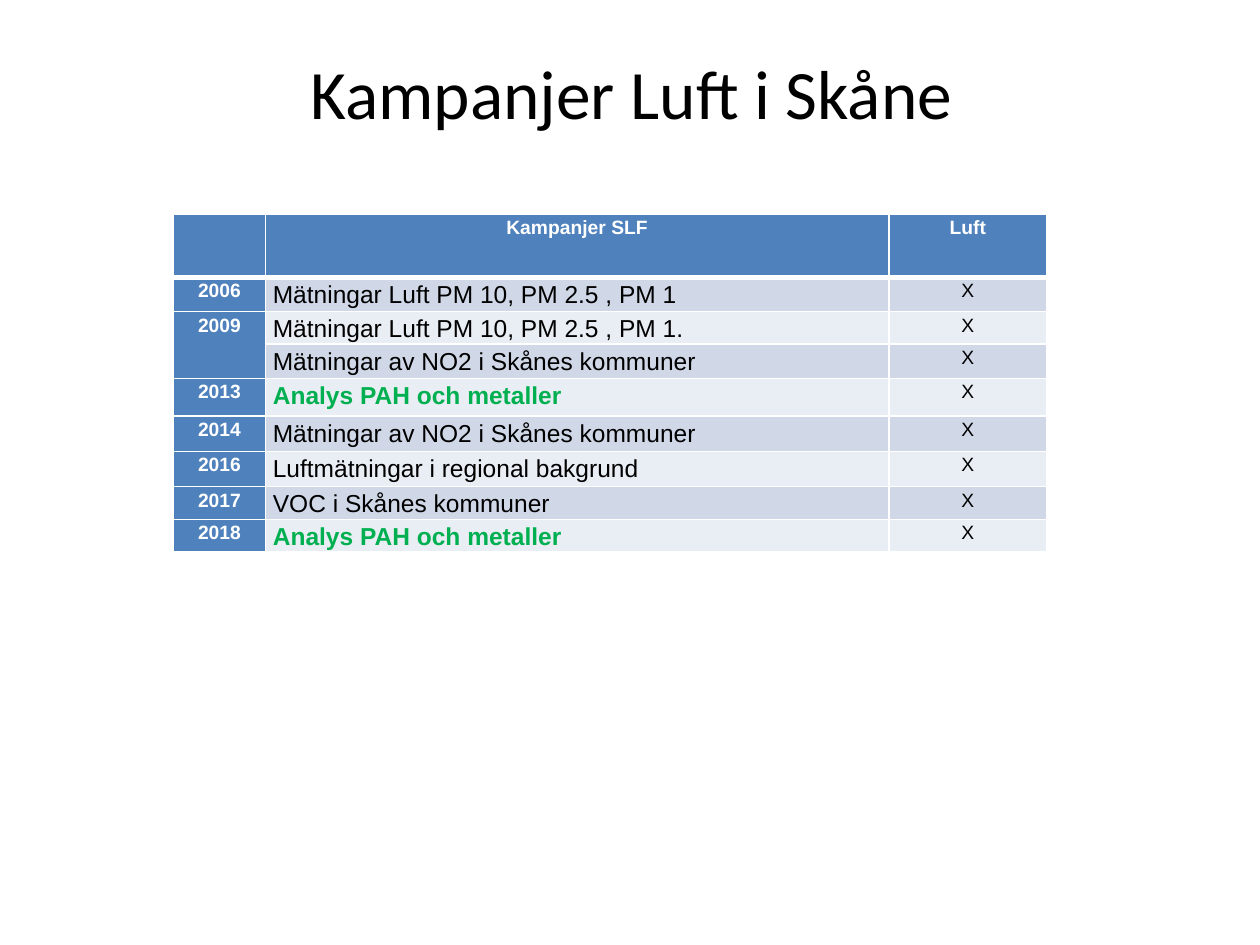
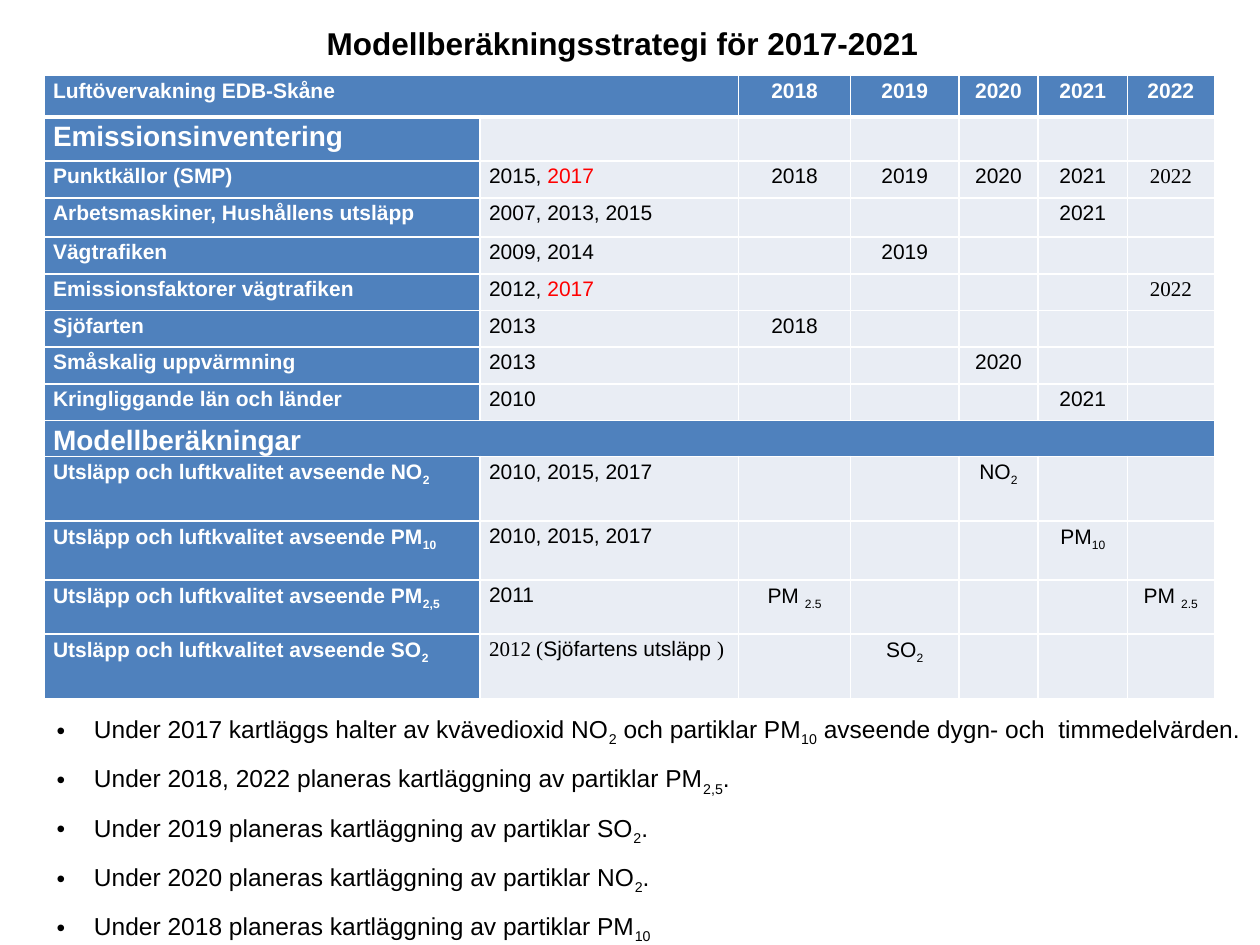
"""Build two slides on the air quality campaigns and model strategy in Skåne."""
from lxml.etree import SubElement
from pptx import Presentation
from pptx.dml.color import RGBColor
from pptx.enum.text import MSO_ANCHOR as Anchor, MSO_AUTO_SIZE as AutoSize, PP_ALIGN as Align
from pptx.oxml import parse_xml
from pptx.oxml.ns import nsdecls, qn
from pptx.util import Cm, Pt

BLUE, BAND, PALE = "4F81BD", "D0D8E8", "E9EDF4"
WHITE, BLACK, GREEN, RED = "FFFFFF", "000000", "00B050", "FF0000"
SANS, SERIF = "Arial", "Times New Roman"

CAMPAIGNS = [
    ("2006", "Mätningar Luft PM 10, PM 2.5 , PM 1"),
    ("2009", "Mätningar Luft PM 10, PM 2.5 , PM 1."),
    (None, "Mätningar av NO2 i Skånes kommuner"),
    ("2013", "Analys PAH och metaller"),
    ("2014", "Mätningar av NO2 i Skånes kommuner"),
    ("2016", "Luftmätningar i regional bakgrund"),
    ("2017", "VOC i Skånes kommuner"),
    ("2018", "Analys PAH och metaller"),
]


def rgb(value):
    """Turn a hex string into a colour."""
    return RGBColor.from_string(value)


def sub(text, low, tail=""):
    """Return runs with a subscript after the text."""
    runs = [(text, {}), (low, {"low": True})]
    return runs + [(tail, {})] if tail else runs


def add_runs(p, content, size, color=BLACK, bold=False, font=SANS):
    """Add a string, or a list of (text, overrides) runs, to a paragraph."""
    runs = [(content, {})] if isinstance(content, str) else content
    for text, own in runs:
        r = p.add_run()
        r.text = text
        r.font.size = Pt(size)
        r.font.name = own.get("font", font)
        r.font.bold = bold
        r.font.color.rgb = rgb(own.get("color", color))
        if own.get("low"):
            r.font._element.set("baseline", "-25000")


def place(shape, left, top, width, height):
    """Move and size a shape in centimetres."""
    shape.left, shape.top = Cm(left), Cm(top)
    shape.width, shape.height = Cm(width), Cm(height)


def set_title(s, text, box, **style):
    """Fill and place the title placeholder."""
    place(s.shapes.title, *box)
    tf = s.shapes.title.text_frame
    tf.auto_size = AutoSize.NONE
    tf.vertical_anchor = Anchor.MIDDLE
    p = tf.paragraphs[0]
    p.alignment = Align.CENTER
    add_runs(p, text, **style)


def set_borders(cell, row):
    """Draw white cell borders, heavier under the header row."""
    tc_pr = cell._tc.get_or_add_tcPr()
    widths = {"L": 1, "R": 1, "T": 3 if row == 1 else 1, "B": 3 if row == 0 else 1}
    for i, (side, width) in enumerate(widths.items()):
        tc_pr.insert(i, parse_xml(
            f'<a:ln{side} {nsdecls("a")} w="{Pt(width)}"><a:solidFill>'
            f'<a:srgbClr val="{WHITE}"/></a:solidFill></a:ln{side}>'))


def add_grid(s, left, top, cols, rows, inset):
    """Add a plain bordered table and return it."""
    frame = s.shapes.add_table(len(rows), len(cols), Cm(left), Cm(top),
                               Cm(sum(cols)), Cm(sum(rows)))
    table = frame.table
    for col, width in zip(table.columns, cols):
        col.width = Cm(width)
    for i, height in enumerate(rows):
        table.rows[i].height = Cm(height)
        for cell in table.rows[i].cells:
            cell.margin_left = cell.margin_right = Cm(inset)
            cell.margin_top = cell.margin_bottom = 0
            set_borders(cell, i)
    return table


def fill_cell(cell, content, fill, size, center=False, **style):
    """Set the fill and the text of a table cell."""
    cell.fill.solid()
    cell.fill.fore_color.rgb = rgb(fill)
    p = cell.text_frame.paragraphs[0]
    p.line_spacing = 1.15
    p.alignment = Align.CENTER if center else Align.LEFT
    if content:
        add_runs(p, content, size, **style)
    else:
        SubElement(p._p, qn("a:endParaRPr")).set("sz", str(size * 100))


def head_cell(cell, content, size, center=False):
    """Fill a blue cell with bold white text."""
    fill_cell(cell, content, BLUE, size, center, color=WHITE, bold=True)


def set_bullets(s, items, box, size):
    """Fill and place the body placeholder with a bullet list."""
    body = s.placeholders[1]
    place(body, *box)
    tf = body.text_frame
    tf.word_wrap = True
    tf.auto_size = AutoSize.NONE
    for i, runs in enumerate(items):
        p = tf.add_paragraph() if i else tf.paragraphs[0]
        p_pr = p._p.get_or_add_pPr()
        p_pr.set("marL", str(Cm(0.75)))
        p_pr.set("indent", str(-Cm(0.75)))
        SubElement(p_pr, qn("a:buFont")).set("typeface", SANS)
        SubElement(p_pr, qn("a:buChar")).set("char", "•")
        p.space_before = Pt(3 if i else 0)
        p.space_after = Pt(6)
        add_runs(p, runs, size)


def campaign_slide(prs):
    """Build the slide that lists the measuring campaigns."""
    s = prs.slides.add_slide(prs.slide_layouts[5])
    set_title(s, "Kampanjer Luft i Skåne", (1.3, 0.78, 22.86, 2.16),
              size=39.6, font="Calibri")
    heights = [1.27, 0.69, 0.66, 0.69, 0.76, 0.71, 0.71, 0.66, 0.66]
    table = add_grid(s, 3.5, 4.32, [1.85, 12.57, 3.18], heights, 0.15)
    for col, text in enumerate(["", "Kampanjer SLF", "Luft"]):
        head_cell(table.cell(0, col), text, 11, center=True)
    for row, (year, name) in enumerate(CAMPAIGNS, 1):
        fill = BAND if row % 2 else PALE
        analysis = name.startswith("Analys")
        head_cell(table.cell(row, 0), year, 11, center=True)
        fill_cell(table.cell(row, 1), name, fill, 14,
                  color=GREEN if analysis else BLACK, bold=analysis)
        fill_cell(table.cell(row, 2), "X", fill, 11, center=True)
        if year is None:
            table.cell(row - 1, 0).merge(table.cell(row, 0))


def strategy_rows():
    """Return (label, earlier years, planned cells by year) for each row."""
    serif_2022 = [("2022", {"font": SERIF})]
    red_2017 = ("2017", {"color": RED})
    quality = "Utsläpp och luftkvalitet avseende "
    pm25 = sub("PM ", "2.5")
    shipping = [("2012 (", {"font": SERIF}), ("Sjöfartens utsläpp ", {}),
                (")", {"font": SERIF})]
    return [
        ("Emissionsinventering", "", {}),
        ("Punktkällor (SMP)", [("2015, ", {}), red_2017],
         {**{y: str(y) for y in range(2018, 2022)}, 2022: serif_2022}),
        ("Arbetsmaskiner, Hushållens utsläpp", "2007, 2013, 2015", {2021: "2021"}),
        ("Vägtrafiken", "2009, 2014", {2019: "2019"}),
        ("Emissionsfaktorer vägtrafiken", [("2012, ", {}), red_2017], {2022: serif_2022}),
        ("Sjöfarten", "2013", {2018: "2018"}),
        ("Småskalig uppvärmning", "2013", {2020: "2020"}),
        ("Kringliggande län och länder", "2010", {2021: "2021"}),
        ("Modellberäkningar", None, {}),
        (sub(quality + "NO", "2"), "2010, 2015, 2017", {2020: sub("NO", "2")}),
        (sub(quality + "PM", "10"), "2010, 2015, 2017", {2021: sub("PM", "10")}),
        (sub(quality + "PM", "2,5"), "2011", {2018: pm25, 2022: pm25}),
        (sub(quality + "SO", "2"), shipping, {2019: sub("SO", "2")}),
    ]


def strategy_slide(prs):
    """Build the slide with the model strategy and its plan."""
    s = prs.slides.add_slide(prs.slide_layouts[1])
    set_title(s, "Modellberäkningsstrategi för 2017-2021", (1.55, 0.17, 22, 1.4),
              size=18, bold=True)
    cols = [8.79, 5.21, 2.26, 2.18, 1.6, 1.8, 1.75]
    heights = [0.84, 0.89, 0.74, 0.79] + [0.74] * 5 + [0.69, 1.3, 1.19, 1.09, 1.3]
    table = add_grid(s, 0.89, 1.52, cols, heights, 0.18)
    years = range(2018, 2023)
    head_cell(table.cell(0, 0), "Luftövervakning EDB-Skåne", 12)
    head_cell(table.cell(0, 1), "", 12)
    table.cell(0, 0).merge(table.cell(0, 1))
    for col, year in enumerate(years, 2):
        head_cell(table.cell(0, col), str(year), 12, center=True)
    for row, (label, earlier, plan) in enumerate(strategy_rows(), 1):
        section = not earlier
        head_cell(table.cell(row, 0), label, 16 if section else 12)
        fill = BLUE if earlier is None else PALE
        fill_cell(table.cell(row, 1), earlier, fill, 12)
        for col, year in enumerate(years, 2):
            fill_cell(table.cell(row, col), plan.get(year), fill, 12, center=True)
        if earlier is None:
            table.cell(row, 0).merge(table.cell(row, len(cols) - 1))
    planned = " planeras kartläggning av partiklar "
    set_bullets(s, [
        sub("Under 2017 kartläggs halter av kvävedioxid NO", "2", " och partiklar PM")
        + [("10", {"low": True}), (" avseende dygn- och  timmedelvärden.", {})],
        sub(f"Under 2018, 2022{planned}PM", "2,5", "."),
        sub(f"Under 2019{planned}SO", "2", "."),
        sub(f"Under 2020{planned}NO", "2", "."),
        sub(f"Under 2018{planned}PM", "10"),
    ], (0.89, 14.27, 24.5, 4.6), 14)


def main():
    """Create and save the presentation."""
    prs = Presentation()
    prs.slide_width, prs.slide_height = Cm(25.4), Cm(19.05)
    campaign_slide(prs)
    strategy_slide(prs)
    prs.save("out.pptx")


if __name__ == "__main__":
    main()
